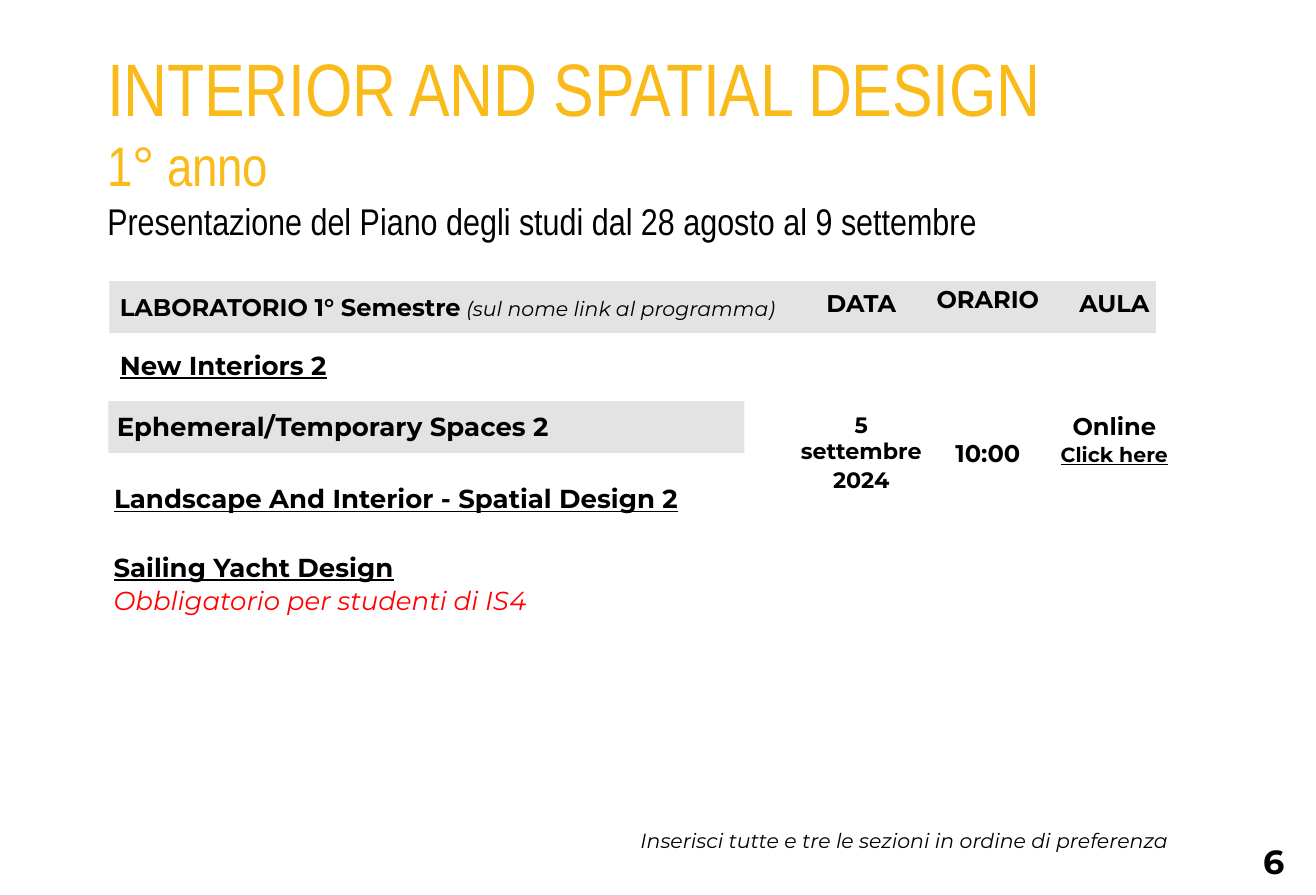
from dataclasses import dataclass
from pptx import Presentation as Deck
from pptx.dml.color import RGBColor as Rgb
from pptx.enum.shapes import MSO_SHAPE as Shape
from pptx.enum.text import PP_ALIGN as Align
from pptx.util import Cm, Pt


@dataclass(frozen=True)
class Theme:
    gold: str = "FABB1A"
    black: str = "000000"
    red: str = "FF0000"
    grey: str = "E3E3E3"
    narrow: str = "Arial Narrow"
    sans: str = "Montserrat"
    title: int = 40
    year: int = 30
    intro: int = 20
    page: int = 18
    item: int = 14
    head: int = 13
    date: int = 12
    small: int = 11


class Page:
    def __init__(self, slide, theme):
        self.slide, self.theme = slide, theme

    def band(self, *box):
        bar = self.slide.shapes.add_shape(Shape.RECTANGLE, *map(Cm, box))
        bar.shadow.inherit = False
        bar.fill.solid()
        bar.fill.fore_color.rgb = Rgb.from_string(self.theme.grey)
        bar.line.fill.background()

    def text(self, box, *paras, align=Align.LEFT):
        """Each paragraph is (space before in points, run, run, ...)."""
        frame = self.slide.shapes.add_textbox(*map(Cm, box)).text_frame
        edges = {"margin_left": Cm(0.03), "margin_top": Cm(0.03),
                 "margin_right": 0, "margin_bottom": 0, "word_wrap": True}
        for name, value in edges.items():
            setattr(frame, name, value)
        for i, (gap, *runs) in enumerate(paras):
            para = frame.add_paragraph() if i else frame.paragraphs[0]
            para.alignment, para.space_before = align, Pt(gap)
            for words, style in runs:
                self.run(para, words, **style)

    def run(self, para, words, size, color=None, track=0, **style):
        """Track is the letter spacing in hundredths of a point."""
        run = para.add_run()
        run.text = words
        look = {"name": self.theme.sans, "size": Pt(size), **style}
        for name, value in look.items():
            setattr(run.font, name, value)
        run.font.color.rgb = Rgb.from_string(color or self.theme.black)
        if track:
            run._r.get_or_add_rPr().set("spc", str(track))


def main():
    deck = Deck()
    deck.slide_width, deck.slide_height = Pt(709), Pt(482)
    t = Theme()
    page = Page(deck.slides.add_slide(deck.slide_layouts[6]), t)

    gold = {"color": t.gold, "name": t.narrow, "track": -10}
    head = {"size": t.head, "bold": True}
    item = {"size": t.item, "bold": True}
    link = {**item, "underline": True}
    date = {"size": t.date, "bold": True}
    note = {"size": t.small, "italic": True}
    click = {"size": t.small, "bold": True, "underline": True}

    page.text((2.01, 0.77, 20.6, 3.89),
              (1, ("INTERIOR AND SPATIAL DESIGN", {"size": t.title, **gold})),
              (0, ("1° anno", {"size": t.year, **gold})),
              (0, ("Presentazione del Piano degli studi dal 28 agosto al 9 settembre",
                   {"size": t.intro, "name": t.narrow})))

    page.band(2.08, 5.34, 19.89, 0.99)
    page.band(2.06, 7.62, 12.09, 0.99)

    page.text((2.25, 5.52, 12.88, 0.58),
              (1, ("LABORATORIO 1° Semestre", head),
               (" ", {"size": t.date, "italic": True}),
               ("(sul nome link al programma)", note)))

    labs = [
        (2.25, 6.61, "New Interiors 2", link),
        (2.19, 7.77, "Ephemeral/Temporary Spaces 2", item),
        (2.14, 9.14, "Landscape And Interior - Spatial Design 2", link),
    ]
    for x, y, name, style in labs:
        page.text((x, y, 11.7, 0.64), (1, (name, style)))
    page.text((2.13, 10.44, 11.7, 1.27),
              (1, ("Sailing Yacht Design", link)),
              (1, ("Obbligatorio per studenti di IS4",
                   {"size": t.item, "italic": True, "color": t.red})))

    # Space before the first value under a column head: 3 or 4 text lines
    line = 16.55
    cols = [
        (15.15, 5.44, 2.41, "DATA", 3, [("5 settembre", date), ("2024", date)]),
        (17.72, 5.37, 2.08, "ORARIO", 4, [("10:00", head)]),
        (19.97, 5.45, 2.39, "AULA", 3, [("Online", head), ("Click here", click)]),
    ]
    for x, y, width, name, skip, (first, *rest) in cols:
        page.text((x, y, width, 4.14), (1, (name, head)),
                  (1 + skip * line, first), *((1, run) for run in rest),
                  align=Align.CENTER)

    page.text((8.44, 15.7, 13.77, 0.51),
              (1, ("Inserisci tutte e tre le sezioni in ordine di preferenza", note)),
              align=Align.RIGHT)
    page.text((23.98, 15.95, 0.66, 0.86),
              (2.4, ("6", {"size": t.page, "bold": True})))

    deck.save("out.pptx")


if __name__ == "__main__":
    main()
